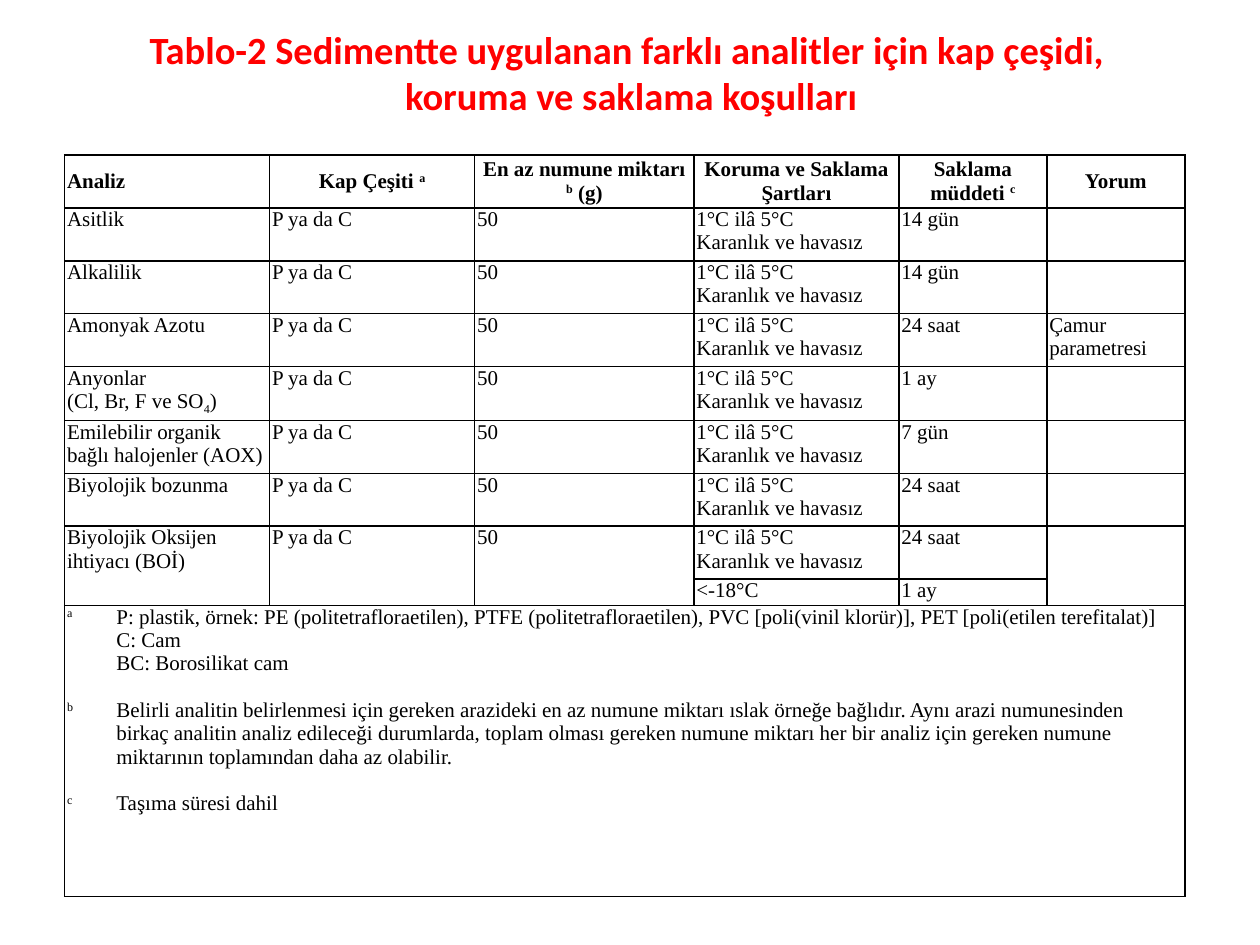
from pptx import Presentation
from pptx.dml.color import RGBColor
from pptx.enum.text import MSO_ANCHOR, PP_ALIGN
from pptx.oxml import parse_xml
from pptx.oxml.ns import nsdecls
from pptx.util import Pt

THEME = {
    "title_font": "Calibri", "title_size": 22, "title_color": "FF0000",
    "table_font": "Times New Roman", "table_size": 12, "text_color": "000000",
    "fill": "FFFFFF", "border": "000000", "border_width": 1,
}
SUPERSCRIPT, SUBSCRIPT = 30000, -25000
LINE = 13.3

TITLE = ["Tablo-2 Sedimentte uygulanan farklı analitler için kap çeşidi, ",
         "koruma ve saklama koşulları"]
HEADERS = [
    ["Analiz"],
    ["Kap Çeşiti ", ("a", SUPERSCRIPT)],
    ["En az numune miktarı ", ("b", SUPERSCRIPT), " (g)"],
    ["Koruma ve Saklama Şartları"],
    ["Saklama müddeti ", ("c", SUPERSCRIPT)],
    ["Yorum"],
]
CONTAINER, AMOUNT = [["P ya da C"]], [["50"]]
STORAGE = [["1°C ilâ 5°C"], ["Karanlık ve havasız"]]
ANALYSES = [
    ([["Asitlik"]], "14 gün", ""),
    ([["Alkalilik"]], "14 gün", ""),
    ([["Amonyak Azotu"]], "24 saat", "Çamur parametresi"),
    ([["Anyonlar"], ["(Cl, Br, F ve SO", ("4", SUBSCRIPT), ")"]], "1 ay", ""),
    ([["Emilebilir organik bağlı halojenler (AOX)"]], "7 gün", ""),
    ([["Biyolojik bozunma"]], "24 saat", ""),
    ([["Biyolojik Oksijen ihtiyacı (BOİ)"]], "24 saat", ""),
]
FROZEN_STORAGE, FROZEN_DURATION = [["<-18°C"]], [["1 ay"]]
NOTE_MARKS = [[(mark, SUPERSCRIPT)] for mark in "abc"]
NOTES = [
    ["P: plastik, örnek: PE (politetrafloraetilen), PTFE (politetrafloraetilen), "
     "PVC [poli(vinil klorür)], PET [poli(etilen terefitalat)]"],
    ["C: Cam"],
    ["BC: Borosilikat cam"],
    ["Belirli analitin belirlenmesi için gereken arazideki en az numune miktarı ıslak "
     "örneğe bağlıdır. Aynı arazi numunesinden birkaç analitin analiz edileceği "
     "durumlarda, toplam olması gereken numune miktarı her bir analiz için gereken "
     "numune miktarının toplamından daha az olabilir."],
    ["Taşıma süresi dahil"],
]

COLUMN_WIDTHS = [28.2, 89, 117.2, 125.3, 117.2, 84.5, 78.9]
ROW_HEIGHTS = [30.24] * 8 + [15.12, 166.3]
FIRST_COLUMNS = [0, 2, 3, 4, 5, 6]
FROZEN_ROW, NOTE_ROW = 8, 9
MERGES = ([((row, 0), (row, 1)) for row in range(7)]
          + [((7, 0), (8, 1))]
          + [((7, column), (8, column)) for column in (2, 3, 6)]
          + [((NOTE_ROW, 1), (NOTE_ROW, 6))])


def add_run(paragraph, text, font_name, size, color, bold, baseline=0):
    run = paragraph.add_run()
    run.text = text
    run.font.name = font_name
    run.font.size = Pt(size)
    run.font.bold = bold
    run.font.color.rgb = RGBColor.from_string(color)
    if baseline:
        run._r.get_or_add_rPr().set("baseline", str(baseline))


def add_title(slide):
    shape = slide.shapes.add_textbox(Pt(36.7), Pt(9.4), Pt(648), Pt(90))
    frame = shape.text_frame
    frame.word_wrap = True
    frame.vertical_anchor = MSO_ANCHOR.MIDDLE
    frame.margin_bottom = Pt(30.4)
    paragraph = frame.paragraphs[0]
    paragraph.alignment = PP_ALIGN.CENTER
    for index, line in enumerate(TITLE):
        if index:
            paragraph.add_line_break()
        add_run(paragraph, line, THEME["title_font"], THEME["title_size"],
                THEME["title_color"], True)


def fill_cell(cell, paragraphs, bold=False, alignment=PP_ALIGN.LEFT, gaps=None):
    frame = cell.text_frame
    for index, pieces in enumerate(paragraphs):
        paragraph = frame.add_paragraph() if index else frame.paragraphs[0]
        paragraph.alignment = alignment
        if gaps and index in gaps:
            paragraph.space_before = Pt(gaps[index])
        for piece in pieces:
            text, baseline = (piece, 0) if isinstance(piece, str) else piece
            add_run(paragraph, text, THEME["table_font"], THEME["table_size"],
                    THEME["text_color"], bold, baseline)


def style_cell(cell, hidden_side=None):
    cell.margin_left = cell.margin_right = Pt(1.44)
    cell.margin_top = cell.margin_bottom = 0
    cell.fill.solid()
    cell.fill.fore_color.rgb = RGBColor.from_string(THEME["fill"])
    properties = cell._tc.get_or_add_tcPr()
    for index, side in enumerate("LRTB"):
        paint = "<a:noFill/>" if side == hidden_side else (
            f'<a:solidFill><a:srgbClr val="{THEME["border"]}"/></a:solidFill>')
        properties.insert(index, parse_xml(
            f'<a:ln{side} {nsdecls("a")} w="{Pt(THEME["border_width"])}">{paint}</a:ln{side}>'))


def table_content():
    content = {}
    for row, (analysis, duration, comment) in enumerate(ANALYSES, 1):
        values = [analysis, CONTAINER, AMOUNT, STORAGE, [[duration]], [[comment]]]
        for column, value in zip(FIRST_COLUMNS, values):
            content[row, column] = value
    content[FROZEN_ROW, 4] = FROZEN_STORAGE
    content[FROZEN_ROW, 5] = FROZEN_DURATION
    return content


def add_analysis_table(slide):
    table = slide.shapes.add_table(
        len(ROW_HEIGHTS), len(COLUMN_WIDTHS), Pt(36.9), Pt(88.6),
        Pt(sum(COLUMN_WIDTHS)), Pt(sum(ROW_HEIGHTS))).table
    table.first_row = table.horz_banding = False
    for column, width in zip(table.columns, COLUMN_WIDTHS):
        column.width = Pt(width)
    for row, height in zip(table.rows, ROW_HEIGHTS):
        row.height = Pt(height)
    for start, end in MERGES:
        table.cell(*start).merge(table.cell(*end))

    hidden_sides = {(NOTE_ROW, 0): "R", (NOTE_ROW, 1): "L"}
    content = table_content()
    for row in range(len(ROW_HEIGHTS)):
        for column in range(len(COLUMN_WIDTHS)):
            cell = table.cell(row, column)
            style_cell(cell, hidden_sides.get((row, column)))
            if row not in (0, NOTE_ROW):
                fill_cell(cell, content.get((row, column), [[""]]))
    for column, header in zip(FIRST_COLUMNS, HEADERS):
        cell = table.cell(0, column)
        cell.vertical_anchor = MSO_ANCHOR.MIDDLE
        fill_cell(cell, [header], True, PP_ALIGN.CENTER if column else PP_ALIGN.LEFT)
    fill_cell(table.cell(NOTE_ROW, 0), NOTE_MARKS, gaps={1: 3 * LINE, 2: 3 * LINE})
    fill_cell(table.cell(NOTE_ROW, 1), NOTES, gaps={3: LINE, 4: LINE})


def main():
    presentation = Presentation()
    presentation.slide_width, presentation.slide_height = Pt(720), Pt(540)
    slide = presentation.slides.add_slide(presentation.slide_layouts[6])
    add_title(slide)
    add_analysis_table(slide)
    presentation.save("out.pptx")


if __name__ == "__main__":
    main()
